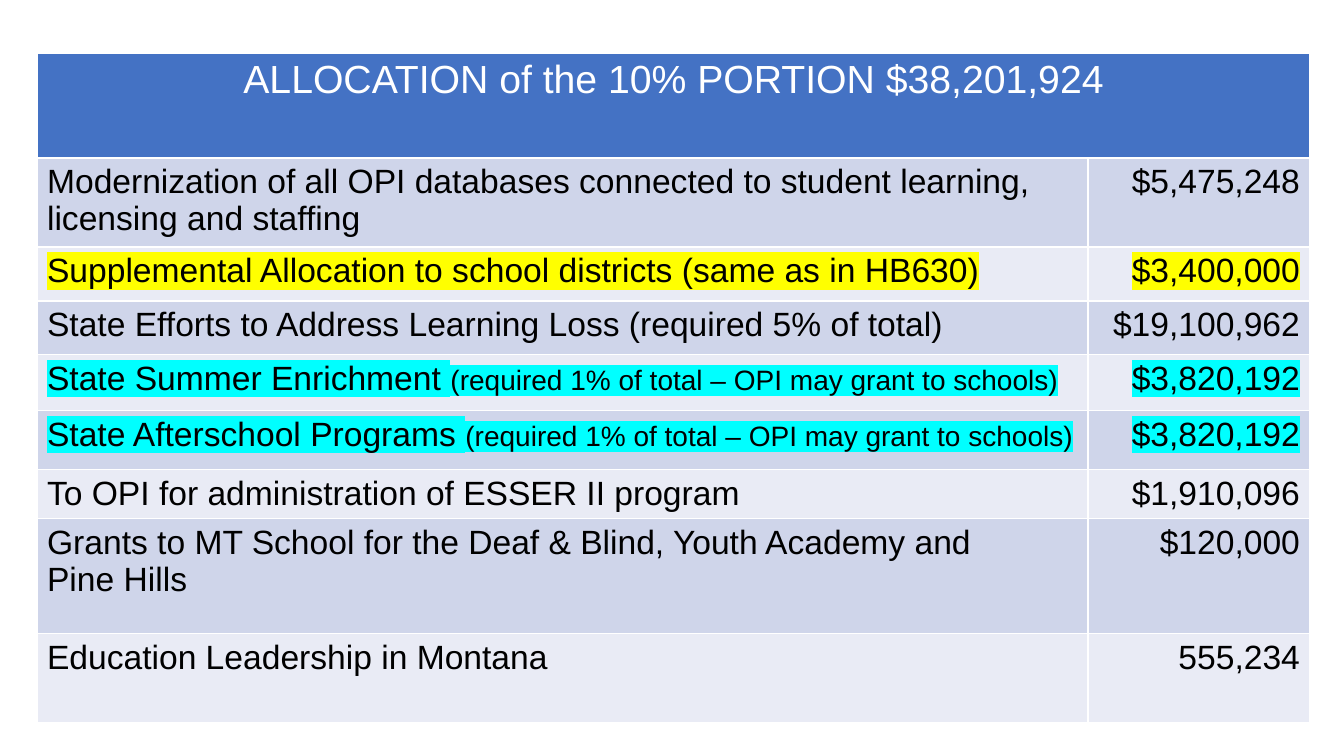
from lxml import etree
from pptx import Presentation
from pptx import util as u
from pptx.dml.color import RGBColor
from pptx.enum import text
from pptx.oxml.ns import qn

WHITE = RGBColor(0xFF, 0xFF, 0xFF)
BLACK = RGBColor(0x00, 0x00, 0x00)
BLUE = RGBColor(0x44, 0x72, 0xC4)
BANDS = RGBColor(0xCF, 0xD5, 0xEA), RGBColor(0xE9, 0xEB, 0xF5)
YELLOW = RGBColor(0xFF, 0xFF, 0x00)
CYAN = RGBColor(0x00, 0xFF, 0xFF)

TITLE = "ALLOCATION of the 10% PORTION $38,201,924"
GRANT_NOTE = "(required 1% of total – OPI may grant to schools)"
ALLOCATIONS = [
    (89, ["Modernization of all OPI databases connected to student learning, "
          "licensing and staffing"], "", "$5,475,248", None),
    (54, ["Supplemental Allocation to school districts (same as in HB630)"],
     "", "$3,400,000", YELLOW),
    (54, ["State Efforts to Address Learning Loss (required 5% of total)"],
     "", "$19,100,962", None),
    (56, ["State Summer Enrichment "], GRANT_NOTE, "$3,820,192", CYAN),
    (59, ["State Afterschool Programs "], GRANT_NOTE, "$3,820,192", CYAN),
    (49, ["To OPI for administration of ESSER II program"],
     "", "$1,910,096", None),
    (115, ["Grants to MT School for the Deaf & Blind, Youth Academy and",
           "Pine Hills"], "", "$120,000", None),
    (89, ["Education Leadership in Montana"], "", "555,234", None),
]
LEFT, TOP = 37, 53
COLUMN_WIDTHS = 1051, 222
HEADER_HEIGHT = 105
FONT = "Arial"


def px(length):
    return u.Emu(round(length * 914400 / 100.8))


def add_span(para, wording, highlight=None):
    span = para.add_run()
    span.text = wording
    if highlight is not None:
        mark = etree.SubElement(span.font._element, qn("a:highlight"))
        etree.SubElement(mark, qn("a:srgbClr"), val=str(highlight))
    return span


def style(para, size, color, align):
    para.alignment = align
    para.font.name = FONT
    para.font.size = u.Pt(size)
    para.font.color.rgb = color


def fill_cell(cell, color):
    cell.fill.solid()
    cell.fill.fore_color.rgb = color


def write_lines(cell, lines, align, highlight):
    frame = cell.text_frame
    for index, line in enumerate(lines):
        para = frame.add_paragraph() if index else frame.paragraphs[0]
        style(para, 24, BLACK, align)
        add_span(para, line, highlight)
    return para


def main():
    deck = Presentation()
    deck.slide_width, deck.slide_height = px(1344), px(756)
    page = deck.slides.add_slide(deck.slide_layouts[6])

    heights = [HEADER_HEIGHT] + [entry[0] for entry in ALLOCATIONS]
    table = page.shapes.add_table(
        len(heights), len(COLUMN_WIDTHS), px(LEFT), px(TOP),
        px(sum(COLUMN_WIDTHS)), px(sum(heights))).table
    for column, width in zip(table.columns, COLUMN_WIDTHS):
        column.width = px(width)
    for row, height in zip(table.rows, heights):
        row.height = px(height)

    header = table.cell(0, 0)
    header.merge(table.cell(0, 1))
    fill_cell(header, BLUE)
    para = header.text_frame.paragraphs[0]
    style(para, 28, WHITE, text.PP_ALIGN.CENTER)
    add_span(para, TITLE).font.bold = False

    for index, (_, lines, note, amount, highlight) in enumerate(ALLOCATIONS):
        purpose, value = table.cell(index + 1, 0), table.cell(index + 1, 1)
        for cell in (purpose, value):
            fill_cell(cell, BANDS[index % 2])
        para = write_lines(purpose, lines, text.PP_ALIGN.LEFT, highlight)
        if note:
            add_span(para, note, highlight).font.size = u.Pt(20)
        write_lines(value, [amount], text.PP_ALIGN.RIGHT, highlight)

    deck.save("out.pptx")


if __name__ == "__main__":
    main()
